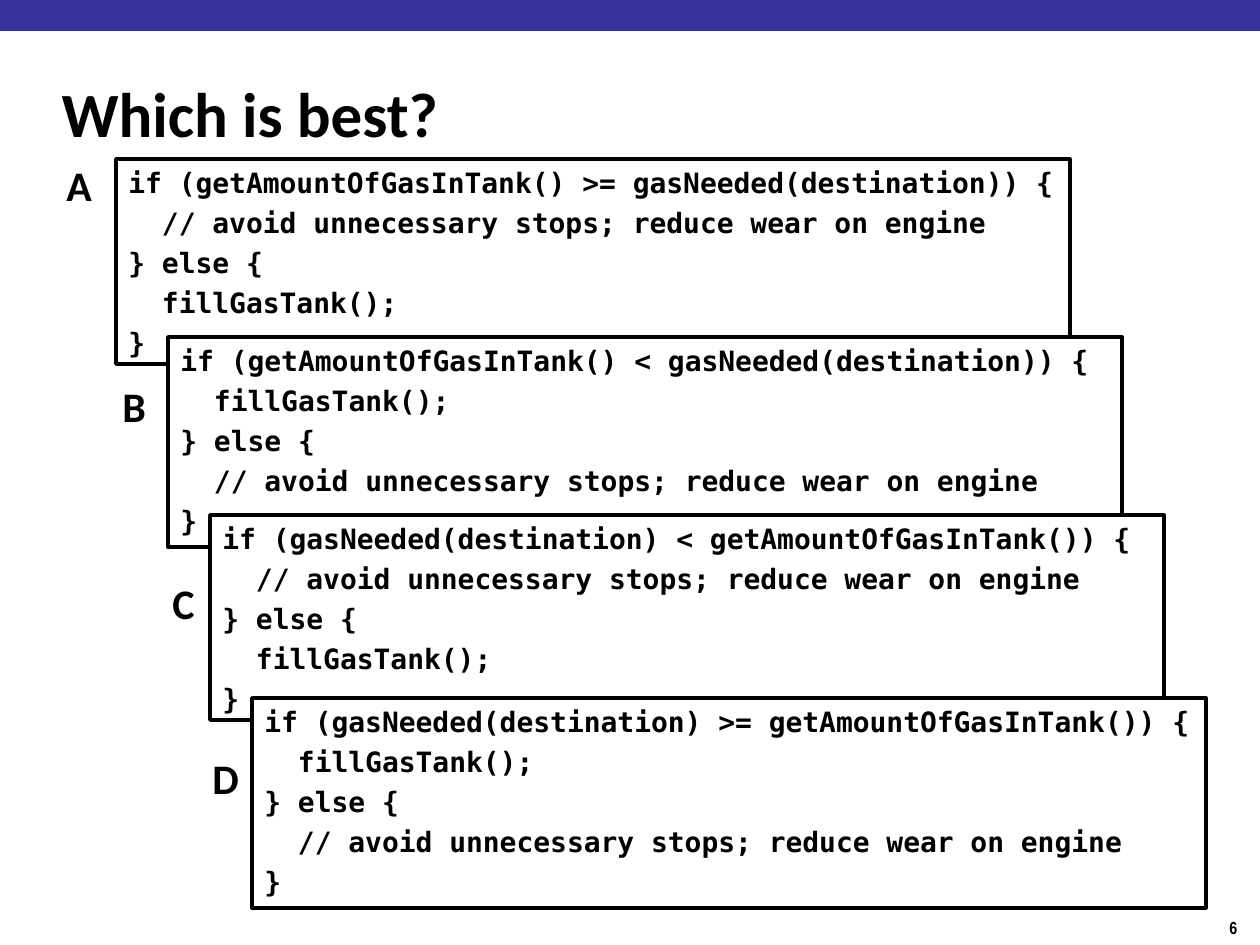
from dataclasses import dataclass

from pptx import Presentation
from pptx.dml.color import RGBColor
from pptx.enum.shapes import MSO_SHAPE
from pptx.enum.text import MSO_ANCHOR, MSO_AUTO_SIZE, PP_ALIGN
from pptx.util import Emu, Pt

RECTANGLE = MSO_SHAPE.RECTANGLE
TOP, MIDDLE = MSO_ANCHOR.TOP, MSO_ANCHOR.MIDDLE
LEFT = PP_ALIGN.LEFT
FIXED, GROW = MSO_AUTO_SIZE.NONE, MSO_AUTO_SIZE.SHAPE_TO_FIT_TEXT

PX_PER_INCH = 126
TITLE_ONLY = 5


@dataclass(frozen=True)
class Theme:
    ink: RGBColor = RGBColor(0, 0, 0)
    paper: RGBColor = RGBColor(255, 255, 255)
    band: RGBColor = RGBColor(0x33, 0x33, 0x99)
    text_font: str = "Calibri"
    code_font: str = "DejaVu Sans Mono"
    number_font: str = "Arial Narrow"
    title_size: int = 36
    label_size: int = 24
    code_size: int = 16
    number_size: int = 10
    code_gap: float = 3.7
    border: int = 2


def px(*lengths):
    """Turn pixel lengths into EMU."""
    return [Emu(round(length * 914400 / PX_PER_INCH)) for length in lengths]


class SlideBuilder:
    def __init__(self, slide, theme):
        self.slide = slide
        self.theme = theme

    def set_text(self, frame, text, font, size, gap=0):
        frame.text = text
        for line in frame.paragraphs:
            line.alignment = LEFT
            line.space_before = Pt(gap)
            for run in line.runs:
                run.font.name = font
                run.font.size = Pt(size)
                run.font.bold = True
                run.font.color.rgb = self.theme.ink

    def title(self, text, *box):
        title = self.slide.shapes.title
        title.left, title.top, title.width, title.height = px(*box)
        frame = title.text_frame
        frame.auto_size = FIXED
        frame.vertical_anchor = MIDDLE
        self.set_text(frame, text, self.theme.text_font,
                      self.theme.title_size)

    def rectangle(self, fill, *box):
        rectangle = self.slide.shapes.add_shape(RECTANGLE, *px(*box))
        rectangle.shadow.inherit = False
        rectangle.fill.solid()
        rectangle.fill.fore_color.rgb = fill
        rectangle.line.fill.background()
        return rectangle

    def code(self, lines, *box):
        listing = self.rectangle(self.theme.paper, *box)
        listing.line.color.rgb = self.theme.ink
        listing.line.width = Pt(self.theme.border)
        frame = listing.text_frame
        frame.word_wrap = True
        frame.vertical_anchor = TOP
        self.set_text(frame, "\n".join(lines), self.theme.code_font,
                      self.theme.code_size, self.theme.code_gap)

    def label(self, text, font, size, *box):
        frame = self.slide.shapes.add_textbox(*px(*box)).text_frame
        frame.word_wrap = False
        frame.auto_size = GROW
        self.set_text(frame, text, font, size)


AVOID = "// avoid unnecessary stops; reduce wear on engine"
FILL = "fillGasTank();"
TANK = "getAmountOfGasInTank()"
NEEDED = "gasNeeded(destination)"

# letter, letter box (left, top, width), code box (left, top, height),
# condition, then-branch, else-branch
OPTIONS = [
    ("A", (54, 153, 52), (116, 159, 205), f"{TANK} >= {NEEDED}", AVOID, FILL),
    ("B", (110, 374, 49), (168, 337, 210), f"{TANK} < {NEEDED}", FILL, AVOID),
    ("C", (160, 571, 48), (210, 515, 205), f"{NEEDED} < {TANK}", AVOID, FILL),
    ("D", (200, 746, 52), (252, 698, 210), f"{NEEDED} >= {TANK}", FILL, AVOID),
]
CODE_WIDTH = 954
LABEL_HEIGHT = 63


def main():
    deck = Presentation()
    deck.slide_width, deck.slide_height = px(1260, 945)
    theme = Theme()
    page = SlideBuilder(
        deck.slides.add_slide(deck.slide_layouts[TITLE_ONLY]), theme)

    page.rectangle(theme.band, 0, 0, 1260, 31)
    page.label("6", theme.number_font, theme.number_size, 1217, 911, 43, 34)
    page.title("Which is best?", 49, 60, 1046, 105)

    for letter, letter_box, code_box, condition, then, otherwise in OPTIONS:
        left, top, height = code_box
        lines = [f"if ({condition}) {{", f"  {then}", "} else {",
                 f"  {otherwise}", "}"]
        page.code(lines, left, top, CODE_WIDTH, height)
        page.label(letter, theme.text_font, theme.label_size,
                   *letter_box, LABEL_HEIGHT)

    deck.save("out.pptx")


if __name__ == "__main__":
    main()
